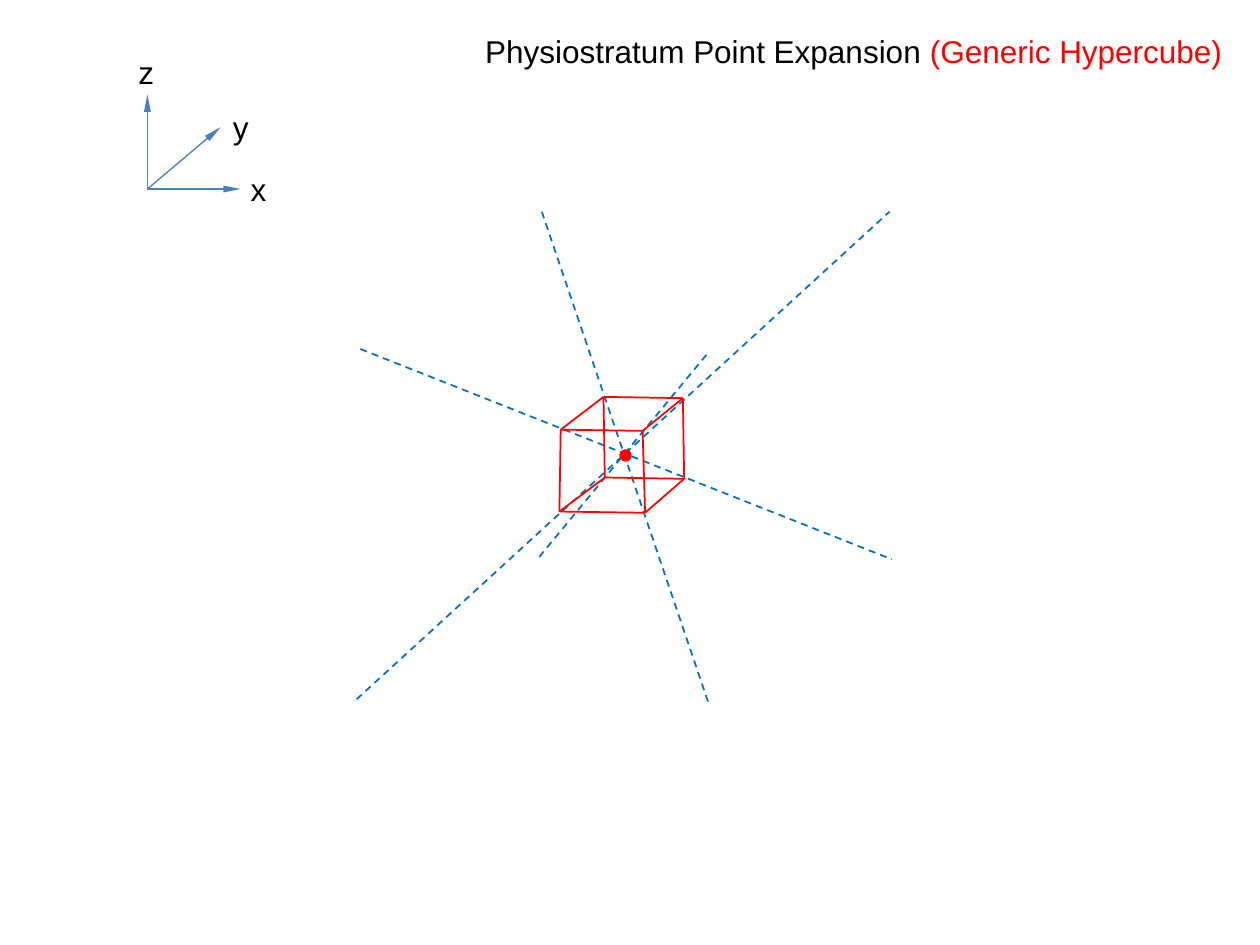
import dataclasses
import itertools

import pptx
import pptx.dml.color
import pptx.enum.dml
import pptx.enum.shapes
import pptx.enum.text
import pptx.oxml
import pptx.util


@dataclasses.dataclass
class Theme:
    font: str = "Arial"
    text_size: float = 18
    text: str = "000000"
    accent: str = "FF0000"
    ray: str = "0070C0"
    axis: str = "4B7EBC"
    thin: float = 0.75
    medium: float = 1
    thick: float = 2


@dataclasses.dataclass
class Box:
    left: float
    top: float
    width: float
    height: float

    def point(self, column, row):
        return grid(self.left + column), grid(self.top + row)


THEME = Theme()
COLUMNS_PER_INCH = 10
SLIDE = Box(0, 0, 100, 75)
TITLE = Box(37.5, 2, 61.7, 4)
AXES = Box(10, 3.5, 14, 14)
HYPERCUBE = Box(28, 16, 43, 40)


def grid(units):
    return pptx.util.Inches(units / COLUMNS_PER_INCH)


def color(value):
    return pptx.dml.color.RGBColor.from_string(value)


def write_text(shape, *parts, size=THEME.text_size, font=THEME.font, wrap=True):
    frame = shape.text_frame
    frame.word_wrap = wrap
    frame.auto_size = pptx.enum.text.MSO_AUTO_SIZE.SHAPE_TO_FIT_TEXT
    frame.vertical_anchor = pptx.enum.text.MSO_ANCHOR.TOP
    paragraph = frame.paragraphs[0]
    paragraph.alignment = pptx.enum.text.PP_ALIGN.LEFT
    for text, text_color in parts:
        run = paragraph.add_run()
        run.text = text
        run.font.size = pptx.util.Pt(size)
        run.font.name = font
        run.font.color.rgb = color(text_color)


def draw_line(slide, box, start, end, line_color, width, dashed=False, arrow=False):
    connector = slide.shapes.add_connector(
        pptx.enum.shapes.MSO_CONNECTOR.STRAIGHT, *box.point(*start), *box.point(*end)
    )
    connector.line.color.rgb = color(line_color)
    connector.line.width = pptx.util.Pt(width)
    if dashed:
        connector.line.dash_style = pptx.enum.dml.MSO_LINE.DASH
    if arrow:
        head = pptx.oxml.parse_xml(
            '<a:tailEnd xmlns:a="http://schemas.openxmlformats.org/drawingml/2006/main"'
            ' type="triangle" w="sm" len="lg"/>'
        )
        connector.line._get_or_add_ln().append(head)
    properties = connector._element.spPr
    properties.append(properties.makeelement(pptx.oxml.ns.qn("a:effectLst"), {}))


def place_title(slide, box):
    title = slide.shapes.title
    title.left, title.top = box.point(0, 0)
    title.width, title.height = grid(box.width), grid(box.height)
    write_text(
        title,
        ("Physiostratum Point Expansion ", THEME.text),
        ("(Generic Hypercube)", THEME.accent),
    )


def draw_axes(slide, box):
    origin = (1.7, 11.5)
    axes = {
        "x": ((9.1, 11.5), (8.9, 9.5)),
        "y": ((7.5, 6.6), (7.5, 4.6)),
        "z": ((1.7, 4), (0, 0.2)),
    }
    for name, (tip, label) in axes.items():
        draw_line(slide, box, origin, tip, THEME.axis, THEME.thin, arrow=True)
        label_box = slide.shapes.add_textbox(*box.point(*label), grid(2.5), grid(4))
        write_text(label_box, (name, THEME.text), wrap=False)


def draw_hypercube(slide, box):
    rays = [
        ((15, 0.8), (28.2, 39.7)),
        ((0.3, 39.5), (42.6, 0.8)),
        ((14.8, 28.2), (28.2, 12)),
        ((0.6, 11.7), (42.8, 28.4)),
    ]
    for start, end in rays:
        draw_line(slide, box, start, end, THEME.ray, THEME.medium, dashed=True)

    positions = [
        (16.5, 18.1), (23, 18.2), (16.4, 24.6), (23.2, 24.7),
        (19.9, 15.5), (26.2, 15.6), (20, 21.9), (26.3, 22),
    ]
    corners = dict(zip(itertools.product((0, 1), repeat=3), positions))
    for first, second in itertools.combinations(corners, 2):
        differences = sum(a != b for a, b in zip(first, second))
        if differences == 1:
            draw_line(
                slide, box, corners[first], corners[second], THEME.accent, THEME.medium
            )

    center = slide.shapes.add_shape(
        pptx.enum.shapes.MSO_SHAPE.OVAL, *box.point(21.3, 19.8), grid(0.7), grid(0.7)
    )
    center.shadow.inherit = False
    center.fill.solid()
    center.fill.fore_color.rgb = color(THEME.accent)
    center.line.color.rgb = color(THEME.accent)
    center.line.width = pptx.util.Pt(THEME.thick)


def main():
    presentation = pptx.Presentation()
    presentation.slide_width = grid(SLIDE.width)
    presentation.slide_height = grid(SLIDE.height)
    title_only = presentation.slide_layouts.get_by_name("Title Only")
    slide = presentation.slides.add_slide(title_only)
    place_title(slide, TITLE)
    draw_hypercube(slide, HYPERCUBE)
    draw_axes(slide, AXES)
    presentation.save("out.pptx")


if __name__ == "__main__":
    main()
